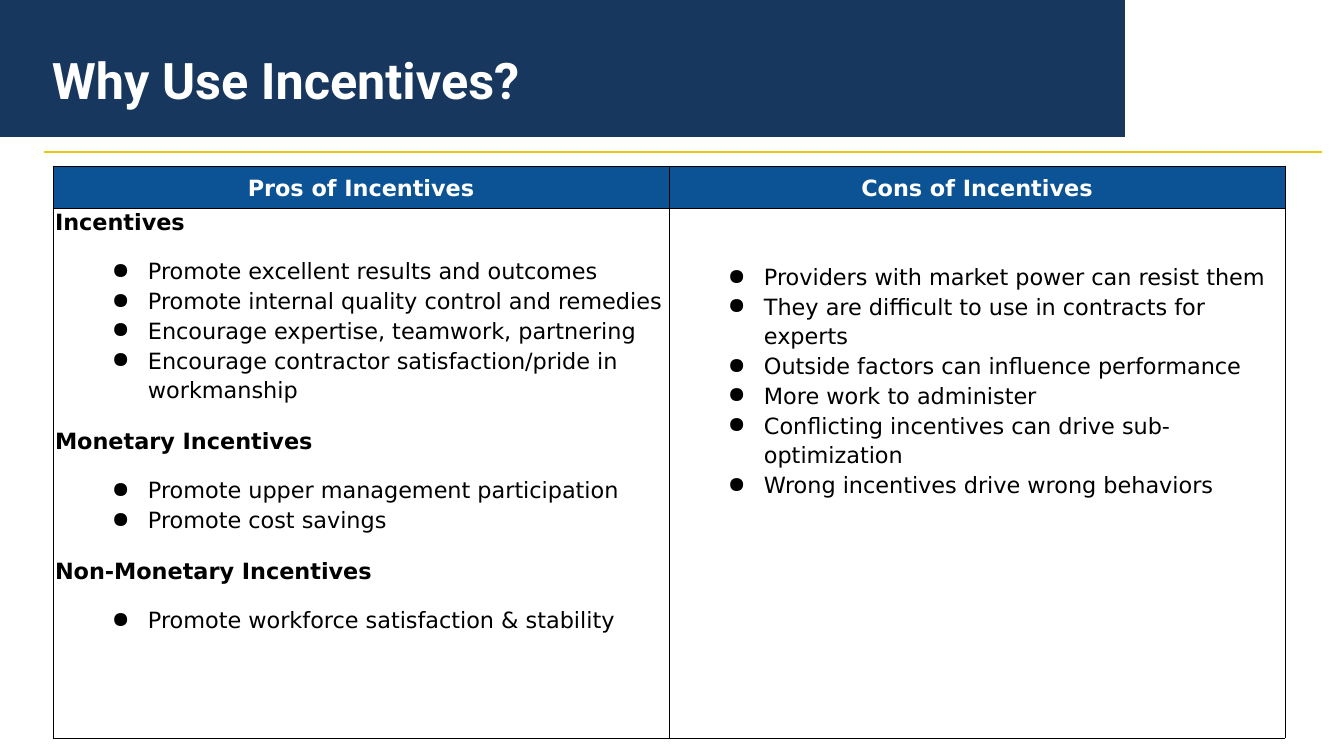
"""Build the slide on the pros and cons of incentives."""
import dataclasses

import lxml.etree
import pptx
import pptx.dml.color
import pptx.enum.shapes
import pptx.enum.text
import pptx.oxml.ns
import pptx.util


@dataclasses.dataclass(frozen=True)
class Theme:
    navy: str = "17375E"
    blue: str = "0B5394"
    gold: str = "EACA0C"
    white: str = "FFFFFF"
    black: str = "000000"
    title_font: str = "Roboto"
    body_font: str = "DejaVu Sans"
    title_size: int = 36
    body_size: int = 16
    line_width: float = 0.75


theme = Theme()
color = pptx.dml.color.RGBColor.from_string
align = pptx.enum.text.PP_ALIGN
anchor = pptx.enum.text.MSO_ANCHOR
qn = pptx.oxml.ns.qn


def px(count):
    return pptx.util.Emu(round(count * 914400 / 100.8))


def add_text(frame, text, font=theme.body_font, size=theme.body_size, ink=theme.black,
             bold=False, alignment=align.LEFT, spacing=1.15, before=0, bullet=False):
    first = frame.paragraphs[0]
    para = frame.add_paragraph() if first.runs else first
    para.alignment = alignment
    para.line_spacing = spacing
    para.space_before = pptx.util.Pt(before)
    if bullet:
        props = para._p.get_or_add_pPr()
        props.set("marL", str(px(93)))
        props.set("indent", str(-px(36)))
        tint = lxml.etree.SubElement(props, qn("a:buClr"))
        lxml.etree.SubElement(tint, qn("a:srgbClr"), val=ink)
        lxml.etree.SubElement(props, qn("a:buChar"), char="●")
    span = para.add_run()
    span.text = text
    span.font.name = font
    span.font.size = pptx.util.Pt(size)
    span.font.bold = bold
    span.font.color.rgb = color(ink)


deck = pptx.Presentation()
deck.slide_width, deck.slide_height = px(1344), px(756)
page = deck.slides.add_slide(deck.slide_layouts[6])

banner = page.shapes.add_shape(
    pptx.enum.shapes.MSO_SHAPE.RECTANGLE, px(-2), px(-2), px(1127), px(139))
banner.shadow.inherit = False
banner.fill.solid()
banner.fill.fore_color.rgb = color(theme.navy)
banner.line.fill.background()

rule = page.shapes.add_connector(
    pptx.enum.shapes.MSO_CONNECTOR.STRAIGHT, px(44), px(152), px(1322), px(152))
rule.line.color.rgb = color(theme.gold)
rule.line.width = pptx.util.Pt(theme.line_width)
lxml.etree.SubElement(rule._element.spPr, qn("a:effectLst"))

title = page.shapes.add_textbox(px(42), px(33), px(1053), px(77)).text_frame
title.word_wrap = True
title.vertical_anchor = anchor.BOTTOM
title.margin_bottom = 0
add_text(title, "Why Use Incentives?", font=theme.title_font, size=theme.title_size,
         ink=theme.white, bold=True, spacing=0.9)

headers = ["Pros of Incentives", "Cons of Incentives"]
pros = {
    "Incentives": [
        "Promote excellent results and outcomes",
        "Promote internal quality control and remedies",
        "Encourage expertise, teamwork, partnering",
        "Encourage contractor satisfaction/pride in workmanship",
    ],
    "Monetary Incentives": [
        "Promote upper management participation",
        "Promote cost savings",
    ],
    "Non-Monetary Incentives": ["Promote workforce satisfaction & stability"],
}
cons = [
    "Providers with market power can resist them",
    "They are difficult to use in contracts for experts",
    "Outside factors can influence performance",
    "More work to administer",
    "Conflicting incentives can drive sub-optimization",
    "Wrong incentives drive wrong behaviors",
]

table = page.shapes.add_table(2, 2, px(53), px(166), px(1232), px(572)).table
table.horz_banding = False
table.rows[0].height, table.rows[1].height = px(42), px(530)
for column in table.columns:
    column.width = px(616)

for cell in table.iter_cells():
    cell.margin_left = cell.margin_right = cell.margin_top = cell.margin_bottom = px(2)
    cell_props = cell._tc.get_or_add_tcPr()
    for side in ("lnL", "lnR", "lnT", "lnB"):
        border = lxml.etree.SubElement(
            cell_props, qn(f"a:{side}"), w=str(pptx.util.Pt(theme.line_width)))
        paint = lxml.etree.SubElement(border, qn("a:solidFill"))
        lxml.etree.SubElement(paint, qn("a:srgbClr"), val=theme.black)
    cell.fill.background()

for index, header in enumerate(headers):
    cell = table.cell(0, index)
    cell.vertical_anchor = anchor.MIDDLE
    cell.fill.solid()
    cell.fill.fore_color.rgb = color(theme.blue)
    add_text(cell.text_frame, header, ink=theme.white, bold=True, alignment=align.CENTER)

pros_cell, cons_cell = table.cell(1, 0), table.cell(1, 1)
for group, (heading, points) in enumerate(pros.items()):
    add_text(pros_cell.text_frame, heading, bold=True,
             spacing=1.15 if group else 1.0, before=15 if group else 0)
    for index, point in enumerate(points):
        add_text(pros_cell.text_frame, point, bullet=True, before=0 if index else 14)

cons_cell.margin_top = px(53)
for point in cons:
    add_text(cons_cell.text_frame, point, bullet=True)

deck.save("out.pptx")
